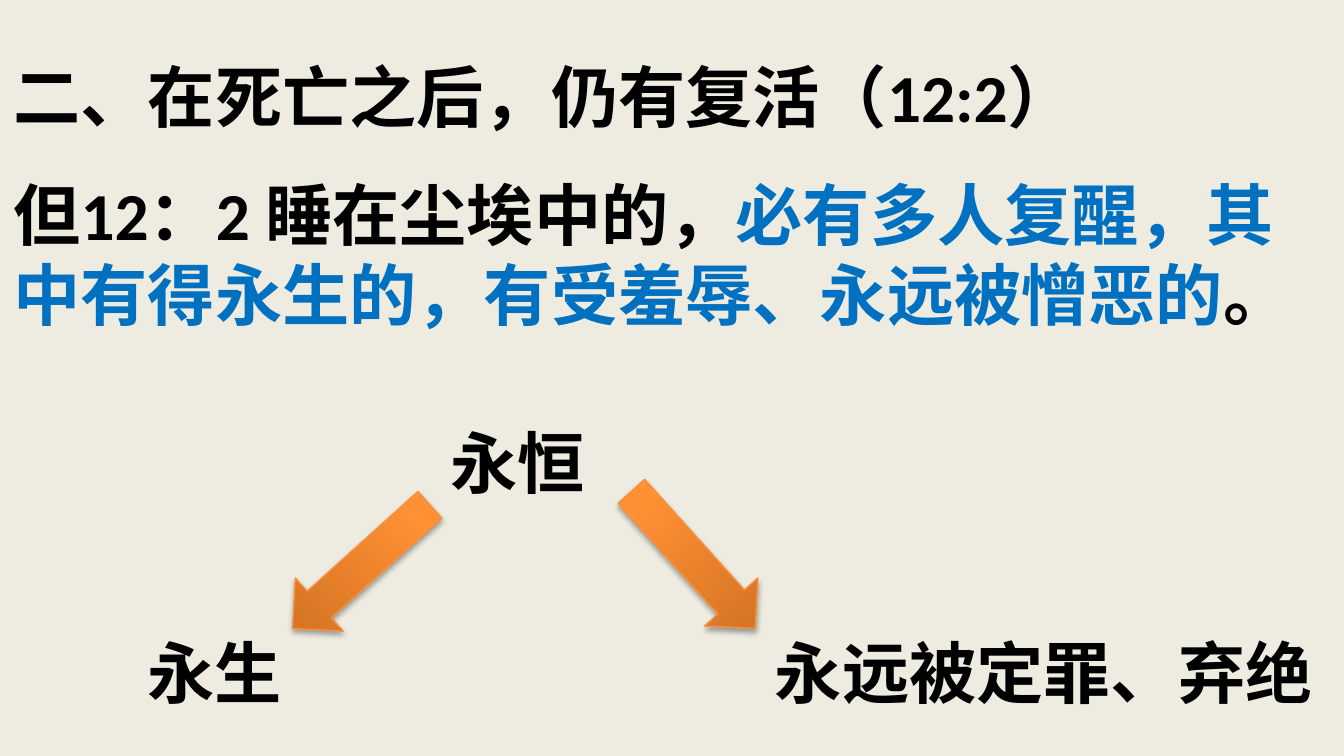
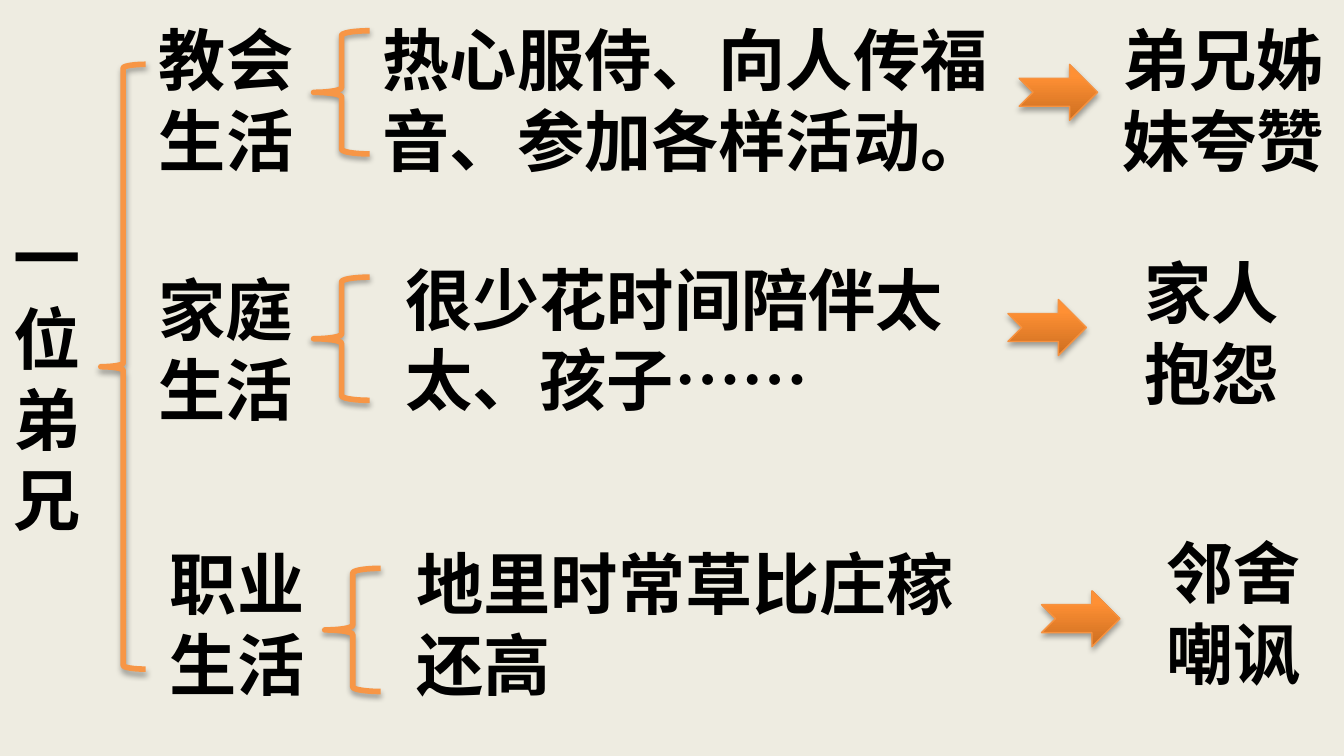
from copy import deepcopy
from dataclasses import dataclass

from lxml.etree import SubElement
from pptx import Presentation
from pptx.dml.color import RGBColor
from pptx.enum.shapes import MSO_SHAPE
from pptx.enum.text import MSO_ANCHOR, MSO_AUTO_SIZE, PP_ALIGN
from pptx.oxml.ns import qn
from pptx.util import Inches, Pt


@dataclass(frozen=True)
class Theme:
    """Colours, type and grid shared by the slides."""
    paper: str = "EEECE1"
    ink: str = "000000"
    blue: str = "0070C0"
    brace: str = "F79646"
    edge: str = "F69240"
    shade: tuple = ((0, "CC6E20"), (0.8, "FF9034"), (1, "FF9136"))
    font: str = "Calibri"
    size: int = 36
    gap: int = 20
    inset: float = 0.5
    wide: float = 10
    high: float = 5.625
    cols: int = 120
    rows: int = 135


THEME = Theme()


def rgb(code):
    """Turn a hex code into a colour."""
    return RGBColor.from_string(code)


def place(box):
    """Turn a box in columns and rows into slide lengths."""
    col, row = THEME.wide / THEME.cols, THEME.high / THEME.rows
    return [Inches(n * unit) for n, unit in zip(box, (col, row, col, row))]


def shift(box, part):
    """Move a part from its place in a box to its place on the slide."""
    return (box[0] + part[0], box[1] + part[1], *part[2:])


def style(run, color=THEME.ink):
    """Give a run the shared type."""
    font = run.font
    font.name, font.size, font.bold = THEME.font, Pt(THEME.size), True
    font.color.rgb = rgb(color)


def dress(frame):
    """Set wrapping, anchor, alignment and type of a text frame."""
    frame.word_wrap = True
    frame.auto_size = MSO_AUTO_SIZE.NONE
    frame.vertical_anchor = MSO_ANCHOR.MIDDLE
    for para in frame.paragraphs:
        para.alignment = PP_ALIGN.LEFT
        for run in para.runs:
            style(run)


def write(slide, box, text):
    """Add a text box."""
    frame = slide.shapes.add_textbox(*place(box)).text_frame
    frame.text = text
    dress(frame)


def head(slide, box, text):
    """Place and fill the title, and return its text frame."""
    title = slide.shapes.title
    title.left, title.top, title.width, title.height = place(box)
    title.text_frame.text = text
    dress(title.text_frame)
    return title.text_frame


def shadow(shape):
    """Give a shape the soft shadow below it."""
    shape.shadow.inherit = False
    effects = shape._element.spPr.find(qn("a:effectLst"))
    outer = SubElement(effects, qn("a:outerShdw"), blurRad=str(Pt(3.1)),
                       dist=str(Pt(1.8)), dir="5400000", rotWithShape="0")
    color = SubElement(outer, qn("a:srgbClr"), val="000000")
    SubElement(color, qn("a:alpha"), val="35000")


def arrow(slide, box, kind, turn=0):
    """Add a shaded block arrow."""
    shape = slide.shapes.add_shape(kind, *place(box))
    shape.rotation = turn
    fill = shape.fill
    fill.gradient()
    fill.gradient_angle = 90
    stops = shape._element.spPr.find(qn("a:gradFill")).find(qn("a:gsLst"))
    stops.append(deepcopy(stops[0]))
    for stop, (spot, code) in zip(fill.gradient_stops, THEME.shade):
        stop.position, stop.color.rgb = spot, rgb(code)
    shape.line.color.rgb = rgb(THEME.edge)
    shape.line.width = Pt(0.75)
    shadow(shape)


def brace(slide, box):
    """Add an open left brace."""
    shape = slide.shapes.add_shape(MSO_SHAPE.LEFT_BRACE, *place(box))
    shape.fill.background()
    shape.line.color.rgb = rgb(THEME.brace)
    shape.line.width = Pt(3)
    shadow(shape)


def verse(slide, box):
    """Write the heading and the verse with its blue words."""
    frame = head(slide, box, "二、在死亡之后，仍有复活（12:2）\n但12：2 睡在尘埃中的，")
    frame.margin_right = Inches(THEME.inset)
    para = frame.paragraphs[1]
    para.space_before = Pt(THEME.gap)
    for text, color in (("必有多人复醒，其中有得永生的，有受羞辱、永远被憎恶的", THEME.blue),
                        ("。", THEME.ink)):
        run = para.add_run()
        run.text = text
        style(run, color)


def fork(slide, box):
    """Draw eternity parting into its two ends."""
    for text, part in (("永恒", (27, 0, 16, 30)), ("永生", (0, 37.5, 16, 30)),
                       ("永远被定罪、弃绝", (56, 37.5, 52, 30))):
        write(slide, shift(box, part), text)
    for left, top, turn in ((17.05, 17.2, 48), (46.7, 16, 317.9)):
        arrow(slide, shift(box, (left, top, 6.4, 33)), MSO_SHAPE.DOWN_ARROW, turn)


def branch(slide, box, label, deed, end, marks):
    """Draw one side of life: label, brace, deed, arrow and outcome."""
    for text, part in (label, deed, end):
        write(slide, shift(box, part), text)
    hook, tip = marks
    brace(slide, shift(box, (*hook, 5, 22)))
    arrow(slide, shift(box, (*tip, 7, 10)), MSO_SHAPE.NOTCHED_RIGHT_ARROW)


BRANCHES = (
    (0, ("教会生活", (0, 0, 16, 35.5)),
     ("热心服侍、向人传福音、参加各样活动。", (20, 0, 59, 35.5)),
     ("弟兄姊妹夸赞", (86, 0, 21, 35.5)), ((15, 5.5), (78, 11.5))),
    (41.5, ("家庭生活", (0, 6, 17, 29.5)),
     ("很少花时间陪伴太太、孩子……", (22, 0, 52, 38)),
     ("家人抱怨", (88, 0, 19, 35.5)), ((15, 8), (77, 12))),
    (91.5, ("职业 生活", (1, 6, 17, 27.5)),
     ("地里时常草比庄稼还高", (23, 4, 52, 31.5)),
     ("邻舍嘲讽", (90, 0, 17, 35.5)), ((16, 10), (80, 14))),
)


def hope(slide):
    """Build the slide on resurrection."""
    verse(slide, (0, 0, THEME.cols, 69.5))
    fork(slide, (12, 67.5))


def life(slide):
    """Build the slide on one brother's life."""
    head(slide, (0, 0, 10, THEME.rows), "一位弟兄")
    brace(slide, (9, 11.5, 4, 108))
    for top, *parts in BRANCHES:
        branch(slide, (13, top), *parts)


def main():
    """Build and save the deck."""
    deck = Presentation()
    deck.slide_width, deck.slide_height = Inches(THEME.wide), Inches(THEME.high)
    fill = deck.slide_master.background.fill
    fill.solid()
    fill.fore_color.rgb = rgb(THEME.paper)
    for build in (hope, life):
        build(deck.slides.add_slide(deck.slide_layouts[5]))
    deck.save("out.pptx")


if __name__ == "__main__":
    main()
